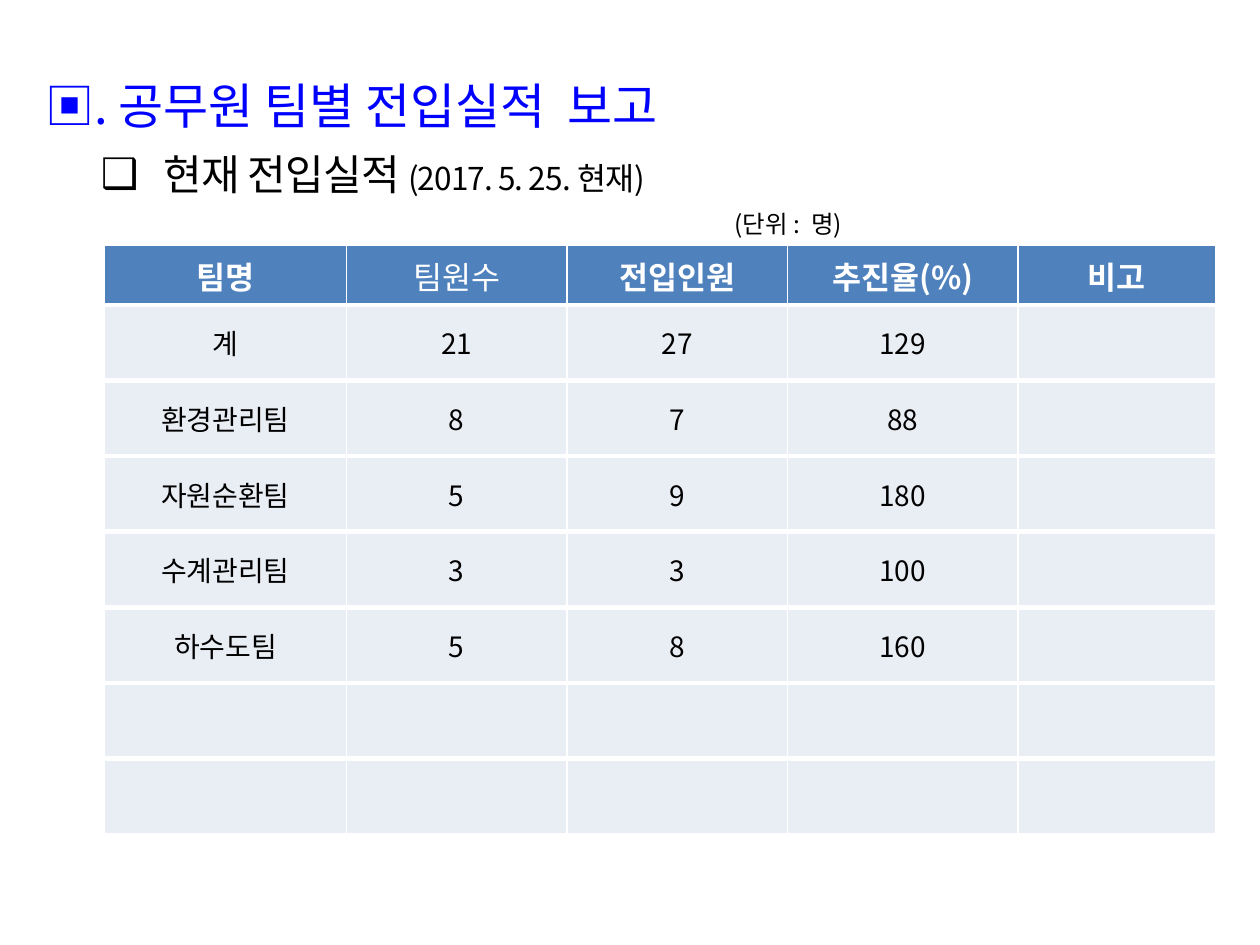
"""Build a slide reporting each team's transfer-in results in a table."""
from dataclasses import dataclass

from lxml.etree import SubElement
from pptx import Presentation
from pptx.dml.color import RGBColor as Color
from pptx.enum.text import MSO_ANCHOR as Anchor, MSO_AUTO_SIZE as AutoSize, PP_ALIGN as Align
from pptx.oxml.ns import qn
from pptx.util import Inches, Pt


@dataclass(frozen=True)
class Theme:
    font: str = "Noto Sans CJK KR"
    title: Color = Color(0x00, 0x00, 0xFF)
    ink: Color = Color(0x00, 0x00, 0x00)
    white: Color = Color(0xFF, 0xFF, 0xFF)
    header: Color = Color(0x4F, 0x81, 0xBD)
    row: Color = Color(0xE9, 0xED, 0xF4)
    title_size: int = 28
    subtitle_size: int = 24
    date_size: int = 18
    unit_size: int = 14
    header_size: int = 18
    cell_size: int = 16


theme = Theme()


def style(font, size, color, bold=False):
    font.name = theme.font
    font.size = Pt(size)
    font.bold = bold
    font.color.rgb = color
    SubElement(font._element, qn("a:ea"), typeface=theme.font)


def place(box, left, top, width, height):
    box.left, box.top = Inches(left), Inches(top)
    box.width, box.height = Inches(width), Inches(height)
    frame = box.text_frame
    frame.auto_size = AutoSize.NONE
    frame.word_wrap = True
    frame.vertical_anchor = Anchor.MIDDLE
    para = frame.paragraphs[0]
    para.alignment = Align.LEFT
    para.space_before = Pt(0)
    return para


deck = Presentation()
deck.slide_width, deck.slide_height = Inches(10), Inches(7.5)
page = deck.slides.add_slide(deck.slide_layouts[1])

para = place(page.shapes.title, 0.26, 0.48, 9.5, 0.7)
para.text = "▣. 공무원 팀별 전입실적  보고"
style(para.font, theme.title_size, theme.title)

para = place(page.placeholders[1], 0.2, 1.08, 9.5, 0.6)
properties = para._p.get_or_add_pPr()
properties.set("marL", str(Inches(1)))
properties.set("indent", str(Inches(-0.5)))
SubElement(properties, qn("a:buChar"), char="❑")
for words, size in (("현재 전입실적 ", theme.subtitle_size), ("(2017. 5. 25. 현재)", theme.date_size)):
    span = para.add_run()
    span.text = words
    style(span.font, size, theme.ink)
    span.font._element.set("spc", "-50")

para = place(page.shapes.add_textbox(0, 0, 0, 0), 5.73, 1.59, 1.6, 0.37)
para.text = "(단위 :  명)"
style(para.font, theme.unit_size, theme.ink)

rows = [
    ("팀명", "팀원수", "전입인원", "추진율(%)", "비고"),
    ("계", "21", "27", "129", ""),
    ("환경관리팀", "8", "7", "88", ""),
    ("자원순환팀", "5", "9", "180", ""),
    ("수계관리팀", "3", "3", "100", ""),
    ("하수도팀", "5", "8", "160", ""),
    ("",) * 5,
    ("",) * 5,
]
widths = (1.92, 1.75, 1.75, 1.83, 1.57)
heights = [0.47] + [0.6] * (len(rows) - 1)
table = page.shapes.add_table(
    len(rows), len(widths), Inches(0.83), Inches(1.95), Inches(sum(widths)), Inches(sum(heights))
).table
for column, width in zip(table.columns, widths):
    column.width = Inches(width)

for row_index, (values, height) in enumerate(zip(rows, heights)):
    table.rows[row_index].height = Inches(height)
    is_header = row_index == 0
    top = 1 if is_header else 3
    bottom = 1 if row_index == len(rows) - 1 else 3
    for column_index, value in enumerate(values):
        cell = table.cell(row_index, column_index)
        cell.vertical_anchor = Anchor.MIDDLE
        for side, points in (("L", 1), ("R", 1), ("T", top), ("B", bottom)):
            line = SubElement(cell._tc.get_or_add_tcPr(), qn(f"a:ln{side}"), w=str(Pt(points)))
            SubElement(SubElement(line, qn("a:solidFill")), qn("a:srgbClr"), val=str(theme.white))
        cell.fill.solid()
        cell.fill.fore_color.rgb = theme.header if is_header else theme.row
        para = cell.text_frame.paragraphs[0]
        para.text = value
        para.alignment = Align.CENTER
        if is_header:
            style(para.font, theme.header_size, theme.white, value != "팀원수")
        else:
            style(para.font, theme.cell_size, theme.ink)

deck.save("out.pptx")
